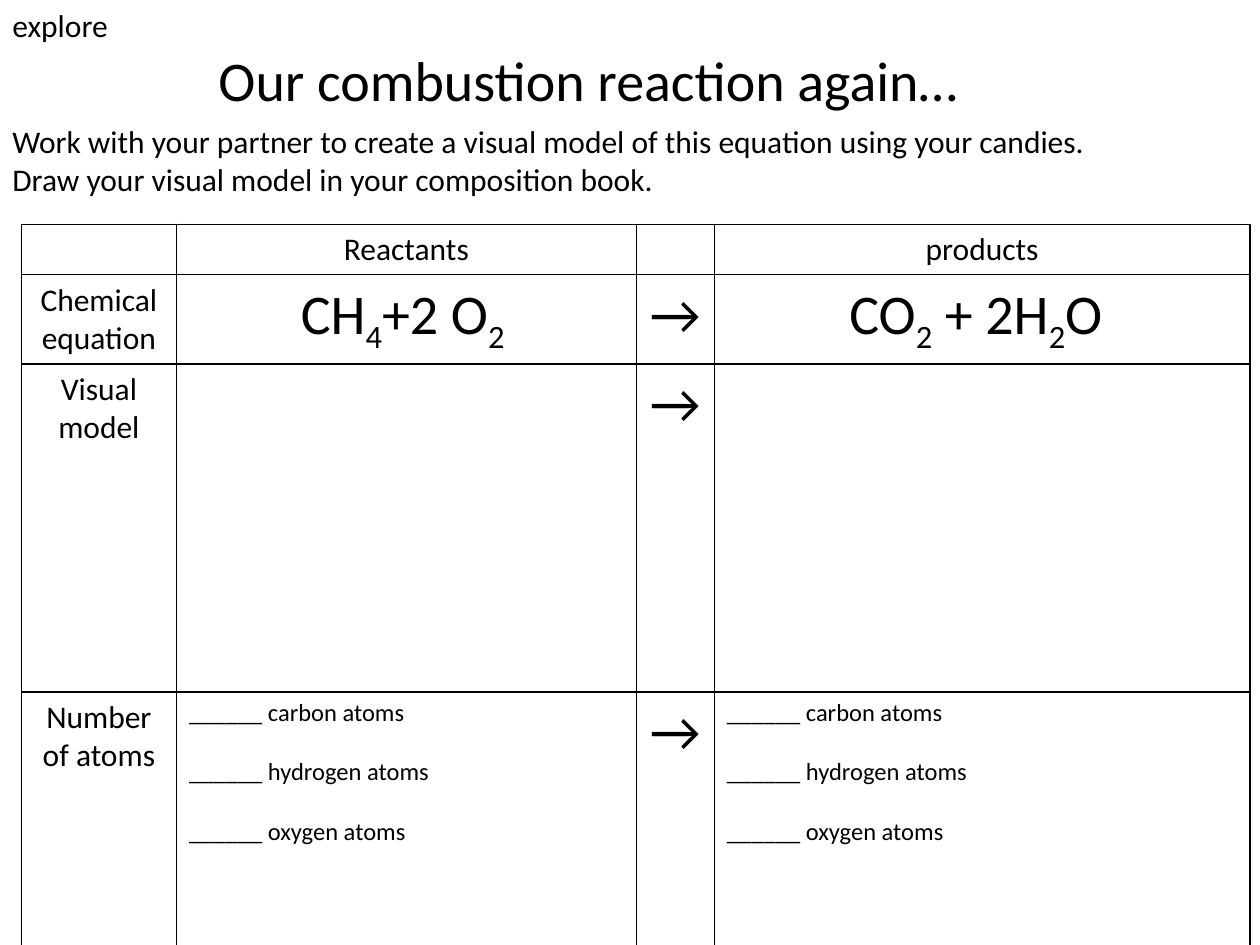
from lxml import etree
from pptx import Presentation
from pptx.dml.color import RGBColor
from pptx.enum.text import MSO_ANCHOR, PP_ALIGN
from pptx.oxml.ns import qn
from pptx.util import Inches, Pt

LEFT, CENTER = PP_ALIGN.LEFT, PP_ALIGN.CENTER
TOP, MIDDLE = MSO_ANCHOR.TOP, MSO_ANCHOR.MIDDLE

COLORS = {"ink": "000000", "paper": "FFFFFF"}
FONT = "Calibri"
BODY, LARGE, SMALL = 18, 32, 14

COLUMN_WIDTHS = [1.23, 3.65, 0.62, 4.25]
ROW_HEIGHTS = [0.4, 0.71, 2.6, 2.02]

ARROW = "→"
ATOM_BLANKS = [f"______ {element} atoms" for element in ("carbon", "hydrogen", "oxygen")]
# In an equation, every second piece is a subscript
REACTANTS = [("CH", "4", "+2 O", "2 ")]
PRODUCTS = [("CO", "2", " + 2H", "2", "O ")]

TABLE_ROWS = [
    ["", "Reactants", "", "products"],
    ["Chemical equation", REACTANTS, ARROW, PRODUCTS],
    ["Visual model", "", ARROW, ""],
    ["Number of atoms", ATOM_BLANKS, ARROW, ATOM_BLANKS],
]


def write_text(frame, text, size=BODY, align=LEFT, gap=0):
    """Write a string or a list of paragraphs, each a string or a tuple of pieces."""
    lines = [text] if isinstance(text, str) else text
    for index, line in enumerate(lines):
        para = frame.paragraphs[0] if index == 0 else frame.add_paragraph()
        para.alignment = align
        para.space_before = Pt(gap if index else 0)
        pieces = (line,) if isinstance(line, str) else line
        for position, piece in enumerate(pieces):
            span = para.add_run()
            span.text = piece
            span.font.name = FONT
            span.font.size = Pt(size)
            span.font.color.rgb = RGBColor.from_string(COLORS["ink"])
            if position % 2:
                span.font._element.set("baseline", "-25000")


def add_text(page, left, top, width, height, text, anchor=TOP, **text_format):
    box = page.shapes.add_textbox(Inches(left), Inches(top), Inches(width), Inches(height))
    frame = box.text_frame
    frame.word_wrap = True
    frame.vertical_anchor = anchor
    write_text(frame, text, **text_format)


def set_borders(cell, width=1):
    properties = cell._tc.get_or_add_tcPr()
    for index, side in enumerate(("lnL", "lnR", "lnT", "lnB")):
        line = etree.Element(qn(f"a:{side}"), w=str(Pt(width)))
        fill = etree.SubElement(line, qn("a:solidFill"))
        etree.SubElement(fill, qn("a:srgbClr"), val=COLORS["ink"])
        properties.insert(index, line)


def cell_format(text):
    if text is ATOM_BLANKS:
        return {"size": SMALL, "gap": 17}
    if text == ARROW or text in (REACTANTS, PRODUCTS):
        return {"size": LARGE, "align": CENTER}
    return {"align": CENTER}


def add_worksheet(page, left, top):
    table = page.shapes.add_table(
        len(ROW_HEIGHTS), len(COLUMN_WIDTHS), Inches(left), Inches(top),
        Inches(sum(COLUMN_WIDTHS)), Inches(sum(ROW_HEIGHTS))).table
    table.first_row = False
    table.horz_banding = False
    for column, width in zip(table.columns, COLUMN_WIDTHS):
        column.width = Inches(width)
    for row, height, texts in zip(table.rows, ROW_HEIGHTS, TABLE_ROWS):
        row.height = Inches(height)
        for cell, text in zip(row.cells, texts):
            cell.fill.solid()
            cell.fill.fore_color.rgb = RGBColor.from_string(COLORS["paper"])
            set_borders(cell)
            if text:
                write_text(cell.text_frame, text, **cell_format(text))


def main():
    deck = Presentation()
    deck.slide_width, deck.slide_height = Inches(10), Inches(7.5)
    page = deck.slides.add_slide(deck.slide_layouts[6])

    # Title
    add_text(page, 0.17, 0, 9, 1.25, "Our combustion reaction again…",
             anchor=MIDDLE, size=LARGE, align=CENTER)

    # Worksheet table
    add_worksheet(page, 0.17, 1.78)

    # Lesson stage and instructions
    add_text(page, 0, 0, 2.58, 0.4, "explore")
    add_text(page, 0, 0.92, 8.83, 0.71, [
        "Work with your partner to create a visual model of this equation using your candies.",
        "Draw your visual model in your composition book.",
    ])

    deck.save("out.pptx")


if __name__ == "__main__":
    main()
